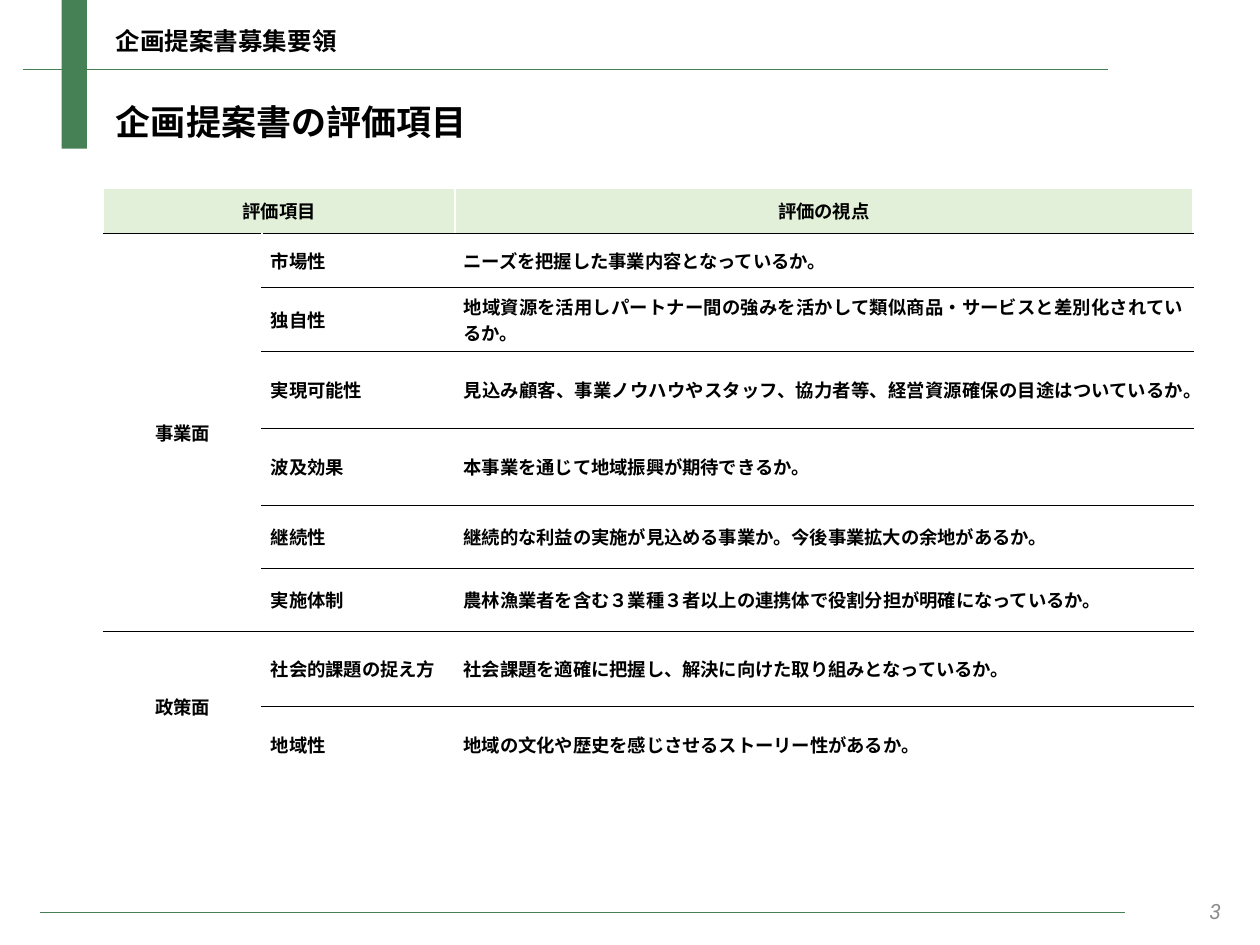
import pptx
import pptx.dml.color
import pptx.enum.shapes
import pptx.enum.text
import pptx.oxml
import pptx.oxml.ns
import pptx.util

Inches = pptx.util.Inches
Pt = pptx.util.Pt
ALIGN = pptx.enum.text.PP_ALIGN
ANCHOR = pptx.enum.text.MSO_ANCHOR

GREEN, PALE_GREEN, BLACK, GRAY, WHITE = "458154", "E2F0D9", "000000", "8C8C8C", "FFFFFF"
JAPANESE, LATIN = "Noto Sans CJK JP", "Roboto"
CELL_FORMAT = {"vertical_anchor": ANCHOR.MIDDLE, "margin_left": Inches(0.07),
               "margin_right": Inches(0.07), "margin_top": 0, "margin_bottom": 0}

COLUMN_WIDTHS = [1.26, 1.53, 5.86]
ROW_HEIGHTS = [0.36, 0.43, 0.51, 0.61, 0.61, 0.5, 0.5, 0.6, 0.6]
HEADINGS = ["評価項目", "", "評価の視点"]
CRITERIA = {
    "事業面": [
        ("市場性", "ニーズを把握した事業内容となっているか。"),
        ("独自性", "地域資源を活用しパートナー間の強みを活かして類似商品・サービスと差別化されているか。"),
        ("実現可能性", "見込み顧客、事業ノウハウやスタッフ、協力者等、経営資源確保の目途はついているか。"),
        ("波及効果", "本事業を通じて地域振興が期待できるか。"),
        ("継続性", "継続的な利益の実施が見込める事業か。今後事業拡大の余地があるか。"),
        ("実施体制", "農林漁業者を含む３業種３者以上の連携体で役割分担が明確になっているか。"),
    ],
    "政策面": [
        ("社会的課題の捉え方", "社会課題を適確に把握し、解決に向けた取り組みとなっているか。"),
        ("地域性", "地域の文化や歴史を感じさせるストーリー性があるか。"),
    ],
}


def color(code):
    return pptx.dml.color.RGBColor.from_string(code)


def set_attributes(target, values):
    for name, value in values.items():
        setattr(target, name, value)


def write(frame, text, size, align=ALIGN.LEFT, typeface=JAPANESE, ink=BLACK,
          bold=True, italic=False):
    """Fill a text frame with one formatted run, in Latin and East Asian fonts."""
    paragraph = frame.paragraphs[0]
    paragraph.alignment = align
    run = paragraph.add_run()
    run.text = text
    set_attributes(run.font, {"name": typeface, "size": Pt(size),
                              "bold": bold, "italic": italic})
    run.font.color.rgb = color(ink)
    east_asian = pptx.oxml.parse_xml(
        f'<a:ea {pptx.oxml.ns.nsdecls("a")} typeface="{typeface}"/>')
    run.font._element.find(pptx.oxml.ns.qn("a:latin")).addnext(east_asian)


def add_text(slide, box, text, size, anchor=ANCHOR.TOP, **style):
    label = slide.shapes.add_textbox(*map(Inches, box))
    set_attributes(label.text_frame, {"word_wrap": True, "vertical_anchor": anchor})
    write(label.text_frame, text, size, **style)


def add_title(slide, box, text, size):
    title = slide.shapes.title
    set_attributes(title, dict(zip(("left", "top", "width", "height"), map(Inches, box))))
    set_attributes(title.text_frame, {
        "word_wrap": True, "vertical_anchor": ANCHOR.TOP,
        "auto_size": pptx.enum.text.MSO_AUTO_SIZE.NONE})
    write(title.text_frame, text, size)


def add_accent_bar(slide, box):
    bar = slide.shapes.add_shape(pptx.enum.shapes.MSO_SHAPE.RECTANGLE, *map(Inches, box))
    bar.shadow.inherit = False
    bar.fill.solid()
    bar.fill.fore_color.rgb = color(GREEN)
    bar.line.fill.background()


def add_rule(slide, left, right, y):
    rule = slide.shapes.add_connector(
        pptx.enum.shapes.MSO_CONNECTOR.STRAIGHT,
        Inches(left), Inches(y), Inches(right), Inches(y))
    rule.line.color.rgb = color(GREEN)
    rule.line.width = Pt(0.75)
    rule._element.spPr.append(
        pptx.oxml.parse_xml(f'<a:effectLst {pptx.oxml.ns.nsdecls("a")}/>'))


def set_borders(cell, top_ruled, bottom_ruled):
    """Draw ruled edges in thin black and all others in white."""
    properties = cell._tc.get_or_add_tcPr()
    edges = {"lnL": False, "lnR": False, "lnT": top_ruled, "lnB": bottom_ruled}
    for position, (edge, ruled) in enumerate(edges.items()):
        ink, width = (BLACK, Pt(0.5)) if ruled else (WHITE, Pt(1))
        properties.insert(position, pptx.oxml.parse_xml(
            f'<a:{edge} {pptx.oxml.ns.nsdecls("a")} w="{int(width)}"><a:solidFill>'
            f'<a:srgbClr val="{ink}"/></a:solidFill></a:{edge}>'))


def add_criteria_table(slide, box):
    rows = [HEADINGS]
    group_starts = []
    for group, items in CRITERIA.items():
        group_starts.append(len(rows))
        rows += [(group if i == 0 else "", *item) for i, item in enumerate(items)]

    table = slide.shapes.add_table(
        len(rows), len(COLUMN_WIDTHS), *map(Inches, box)).table
    set_attributes(table, {"first_row": False, "horz_banding": False})
    for column, width in zip(table.columns, COLUMN_WIDTHS):
        column.width = Inches(width)
    for row, height in zip(table.rows, ROW_HEIGHTS):
        row.height = Inches(height)

    table.cell(0, 0).merge(table.cell(0, 1))
    for start, items in zip(group_starts, CRITERIA.values()):
        table.cell(start, 0).merge(table.cell(start + len(items) - 1, 0))

    for r, texts in enumerate(rows):
        for c, text in enumerate(texts):
            cell = table.cell(r, c)
            ruled = group_starts if c == 0 else range(1, len(rows))
            bottom = r + (cell.span_height if cell.is_merge_origin else 1)
            set_borders(cell, r in ruled, bottom in ruled)
            set_attributes(cell, CELL_FORMAT)
            if r == 0:
                cell.fill.solid()
                cell.fill.fore_color.rgb = color(PALE_GREEN)
            else:
                cell.fill.background()
            if text:
                centred = r == 0 or c == 0
                write(cell.text_frame, text, 10.5,
                      ALIGN.CENTER if centred else ALIGN.JUSTIFY)


def main():
    deck = pptx.Presentation()
    set_attributes(deck, {"slide_width": Inches(10), "slide_height": Inches(7.5)})
    slide = deck.slides.add_slide(deck.slide_layouts[5])
    add_accent_bar(slide, (0.49, 0, 0.2, 1.18))
    add_rule(slide, 0.18, 8.79, 0.55)
    add_rule(slide, 0.32, 8.93, 7.24)
    add_text(slide, (7.54, 7.03, 2.25, 0.4), "3", 12, ANCHOR.MIDDLE, align=ALIGN.RIGHT,
             typeface=LATIN, ink=GRAY, bold=False, italic=True)
    add_title(slide, (0.82, 0.75, 4.82, 0.44), "企画提案書の評価項目", 20)
    add_criteria_table(slide, (0.82, 1.49, 8.66, 4.72))
    add_text(slide, (0.82, 0.16, 2.75, 0.34), "企画提案書募集要領", 14)
    deck.save("out.pptx")


if __name__ == "__main__":
    main()
